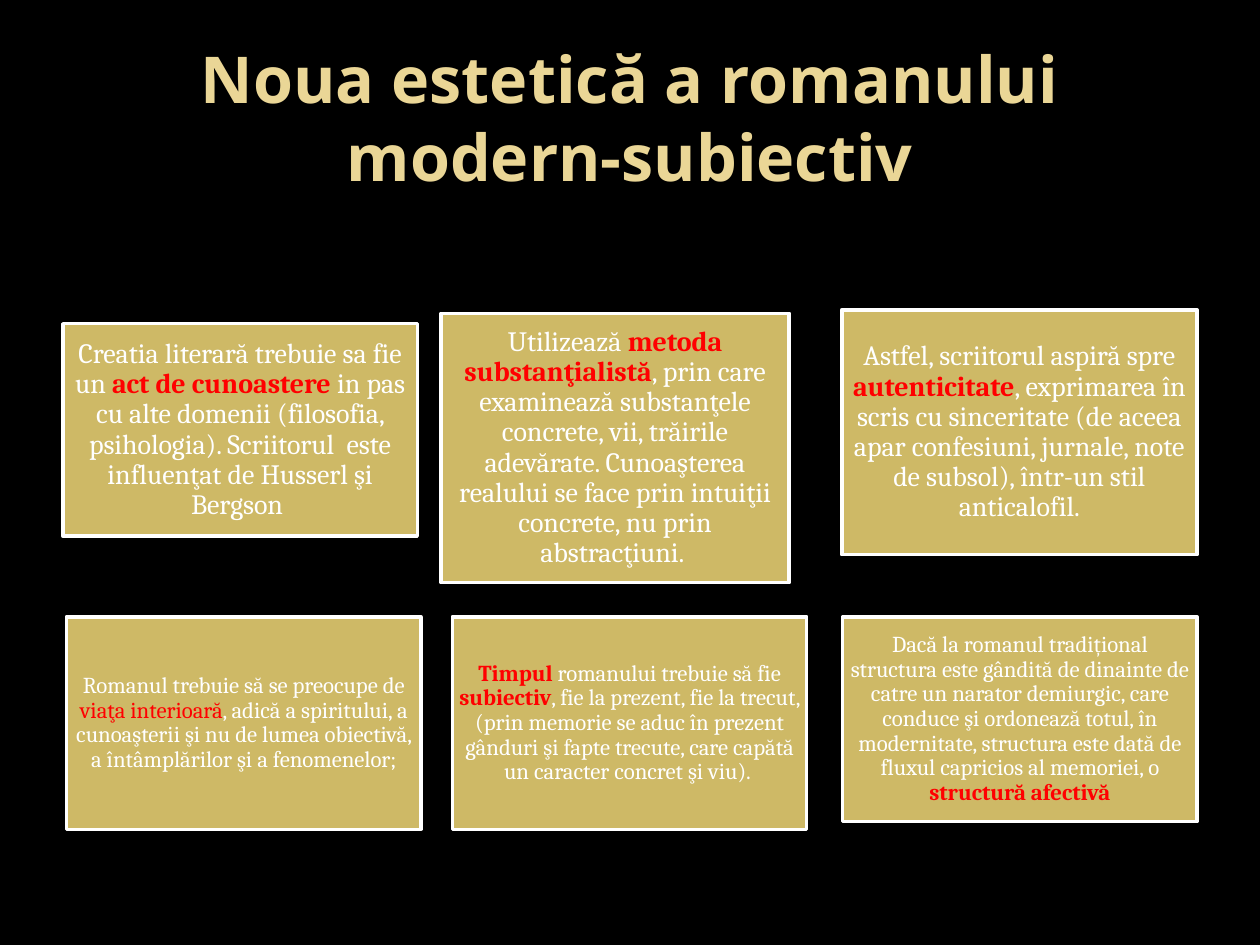
from pptx import Presentation
from pptx.dml.color import RGBColor
from pptx.enum.shapes import MSO_SHAPE as SHAPE
from pptx.enum.text import MSO_ANCHOR as ANCHOR, PP_ALIGN as ALIGN
from pptx.util import Pt

BLACK, GOLD, CREAM = "000000", "CEB966", "EAD696"
WHITE, RED = "FFFFFF", "FF0000"

PLAIN, KEY, RED_ONLY = (WHITE, False), (RED, True), (RED, False)

TOP_ROW = [
    ((36, 185, 202.5, 121.5), [
        ("Creatia literară trebuie sa fie un ", PLAIN),
        ("act de cunoastere ", KEY),
        ("in pas cu alte domenii (filosofia, psihologia). Scriitorul  este "
         "influenţat de Husserl şi Bergson ", PLAIN)]),
    ((252, 179, 199, 154), [
        ("Utilizează ", PLAIN),
        ("metoda substanţialistă", KEY),
        (", prin care examinează substanţele concrete, vii, trăirile adevărate. "
         "Cunoaşterea realului se face prin intuiţii concrete, nu prin "
         "abstracţiuni. ", PLAIN)]),
    ((481, 177, 203, 140), [
        ("Astfel, scriitorul aspiră spre ", PLAIN),
        ("autenticitate", KEY),
        (", exprimarea în scris cu sinceritate (de aceea apar confesiuni, "
         "jurnale, note de subsol), într-un stil anticalofil.", PLAIN)]),
]

BOTTOM_ROW = [
    ((38, 352.5, 202.5, 121.5), [
        ("Romanul trebuie să se preocupe de ", PLAIN),
        ("viaţa interioară", RED_ONLY),
        (", adică a spiritului, a cunoaşterii şi nu de lumea obiectivă, "
         "a întâmplărilor şi a fenomenelor;", PLAIN)]),
    ((258.5, 352.5, 202.5, 121.5), [
        ("Timpul", KEY),
        (" romanului trebuie să fie ", PLAIN),
        ("subiectiv", KEY),
        (", fie la prezent, fie la trecut, (prin memorie se aduc în prezent "
         "gânduri şi fapte trecute, care capătă un caracter concret şi viu). ",
         PLAIN)]),
    ((481.5, 352.5, 202.5, 117), [
        ("Dacă la romanul tradițional structura este gândită de dinainte de "
         "catre un narator demiurgic, care conduce şi ordonează totul, în "
         "modernitate, structura este dată de fluxul capricios al memoriei, o ",
         PLAIN),
        ("structură afectivă", KEY)]),
]


def rgb(color):
    return RGBColor.from_string(color)


def place(sp, box):
    sp.left, sp.top, sp.width, sp.height = map(Pt, box)


def add_run(p, text, font, size, color, bold):
    r = p.add_run()
    r.text = text
    r.font.name = font
    r.font.size = Pt(size)
    r.font.bold = bold
    r.font.color.rgb = rgb(color)


def add_title(s, text):
    sp = s.shapes.title
    place(sp, (36, 21.6, 648, 90))
    tf = sp.text_frame
    tf.word_wrap = True
    tf.vertical_anchor = ANCHOR.MIDDLE
    p = tf.paragraphs[0]
    p.alignment = ALIGN.CENTER
    add_run(p, text, "Noto Sans", 36.9, CREAM, True)


def add_card(s, box, runs, size, inset):
    sp = s.shapes.add_shape(SHAPE.RECTANGLE, *map(Pt, box))
    sp.shadow.inherit = False
    sp.fill.solid()
    sp.fill.fore_color.rgb = rgb(GOLD)
    sp.line.color.rgb = rgb(WHITE)
    sp.line.width = Pt(2)
    tf = sp.text_frame
    tf.word_wrap = True
    tf.vertical_anchor = ANCHOR.MIDDLE
    tf.margin_left = tf.margin_right = Pt(inset)
    tf.margin_top = tf.margin_bottom = Pt(inset)
    p = tf.paragraphs[0]
    p.alignment = ALIGN.CENTER
    p.line_spacing = 0.9
    for text, (color, bold) in runs:
        add_run(p, text, "Cambria", size, color, bold)


def main():
    prs = Presentation()
    prs.slide_width, prs.slide_height = Pt(720), Pt(540)
    s = prs.slides.add_slide(prs.slide_layouts[5])
    s.background.fill.solid()
    s.background.fill.fore_color.rgb = rgb(BLACK)
    add_title(s, "Noua estetică a romanului modern-subiectiv")
    for row, size, inset in ((TOP_ROW, 16, 4.8), (BOTTOM_ROW, 13, 3.9)):
        for box, runs in row:
            add_card(s, box, runs, size, inset)
    prs.save("out.pptx")


if __name__ == "__main__":
    main()
